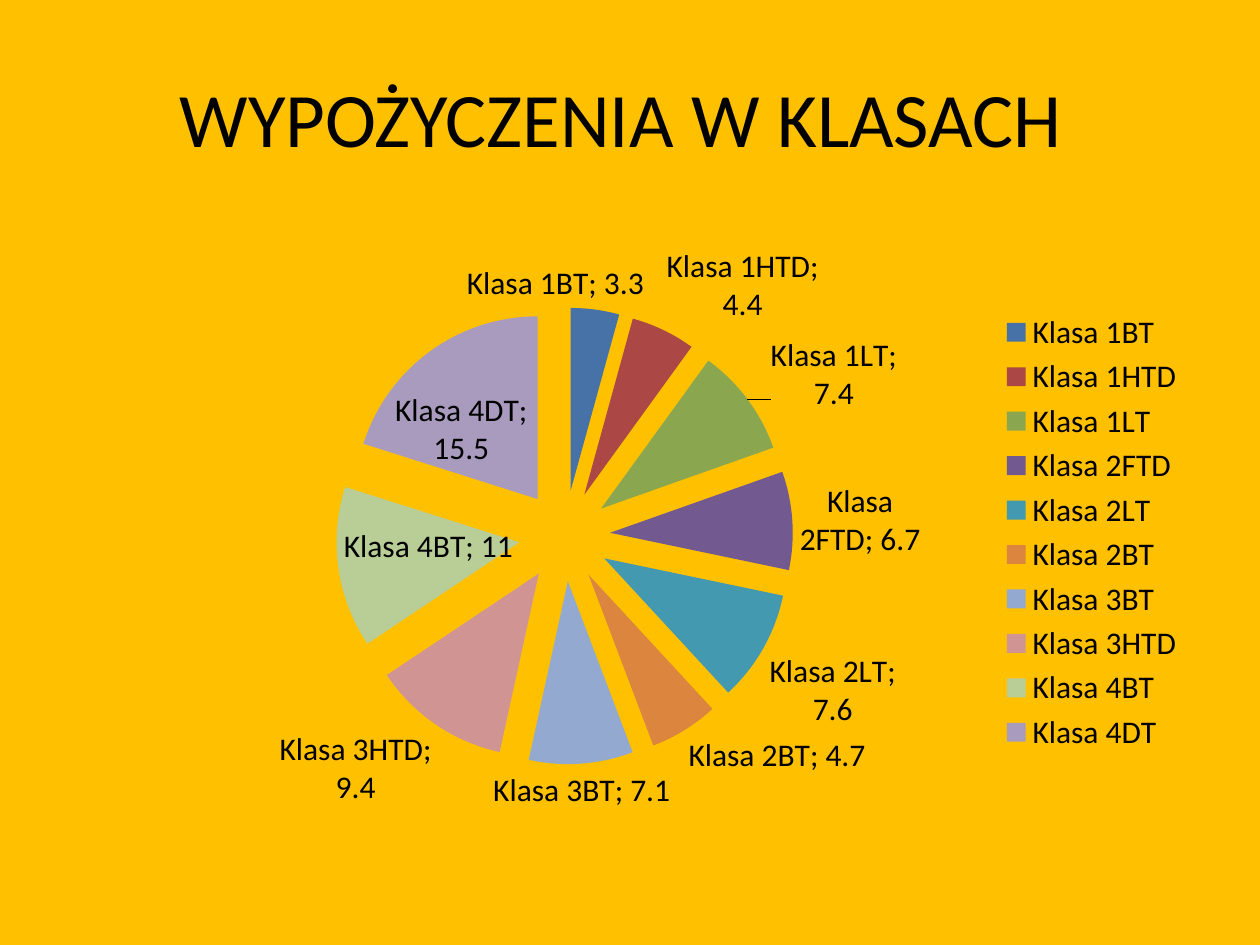
import pptx
import pptx.chart.data
import pptx.dml.color
import pptx.enum.chart
import pptx.enum.text
import pptx.oxml
import pptx.util
from pptx.util import Inches

COLORS = {
    "background": "FFC000",
    "text": "000000",
    "Klasa 1BT": "4672A8",
    "Klasa 1HTD": "AB4744",
    "Klasa 1LT": "8AA64F",
    "Klasa 2FTD": "725990",
    "Klasa 2LT": "4299B0",
    "Klasa 2BT": "DC853E",
    "Klasa 3BT": "93A9CF",
    "Klasa 3HTD": "D09493",
    "Klasa 4BT": "B9CE96",
    "Klasa 4DT": "A99BBD",
}
LOANS = {
    "Klasa 1BT": 3.3,
    "Klasa 1HTD": 4.4,
    "Klasa 1LT": 7.4,
    "Klasa 2FTD": 6.7,
    "Klasa 2LT": 7.6,
    "Klasa 2BT": 4.7,
    "Klasa 3BT": 7.1,
    "Klasa 3HTD": 9.4,
    "Klasa 4BT": 11,
    "Klasa 4DT": 15.5,
}


def apply_format(target, values):
    for name, value in values.items():
        setattr(target, name, value)


def paint(fill, color):
    fill.solid()
    fill.fore_color.rgb = pptx.dml.color.RGBColor.from_string(COLORS[color])


def format_font(font, size):
    apply_format(font, {"name": "Calibri", "size": pptx.util.Pt(size), "bold": False})
    font.color.rgb = pptx.dml.color.RGBColor.from_string(COLORS["text"])


def add_title(page, text):
    title = page.shapes.title
    apply_format(title, {"left": Inches(0.5), "top": Inches(0.3),
                         "width": Inches(9), "height": Inches(1.25)})
    frame = title.text_frame
    apply_format(frame, {"word_wrap": True,
                         "vertical_anchor": pptx.enum.text.MSO_ANCHOR.MIDDLE})
    para = frame.paragraphs[0]
    para.alignment = pptx.enum.text.PP_ALIGN.CENTER
    span = para.add_run()
    span.text = text
    format_font(span.font, 44)


def explode_slices(series, percent):
    explosion = pptx.oxml.parse_xml(
        '<c:explosion xmlns:c="http://schemas.openxmlformats.org/drawingml/2006/chart" '
        f'val="{percent}"/>')
    first_point = series._element.xpath("c:dPt")[0]
    first_point.addprevious(explosion)


def add_pie(page, values):
    data = pptx.chart.data.CategoryChartData()
    data.categories = list(values)
    data.add_series("Series 1", list(values.values()))
    chart = page.shapes.add_chart(
        pptx.enum.chart.XL_CHART_TYPE.PIE,
        Inches(0.5), Inches(1.75), Inches(9), Inches(4.95), data).chart
    apply_format(chart, {"has_title": False, "has_legend": True})
    format_font(chart.font, 18)
    apply_format(chart.legend, {
        "position": pptx.enum.chart.XL_LEGEND_POSITION.RIGHT,
        "include_in_layout": False})
    plot = chart.plots[0]
    apply_format(plot, {"vary_by_categories": True, "has_data_labels": True})
    apply_format(plot.data_labels, {
        "show_value": True, "show_category_name": True, "show_percentage": False,
        "position": pptx.enum.chart.XL_LABEL_POSITION.BEST_FIT})
    series = plot.series[0]
    for index, category in enumerate(values):
        paint(series.points[index].format.fill, category)
    explode_slices(series, 25)


def main():
    deck = pptx.Presentation()
    apply_format(deck, {"slide_width": Inches(10), "slide_height": Inches(7.5)})
    page = deck.slides.add_slide(deck.slide_layouts[5])
    paint(page.background.fill, "background")
    add_title(page, "WYPOŻYCZENIA W KLASACH ")
    add_pie(page, LOANS)
    deck.save("out.pptx")


if __name__ == "__main__":
    main()
